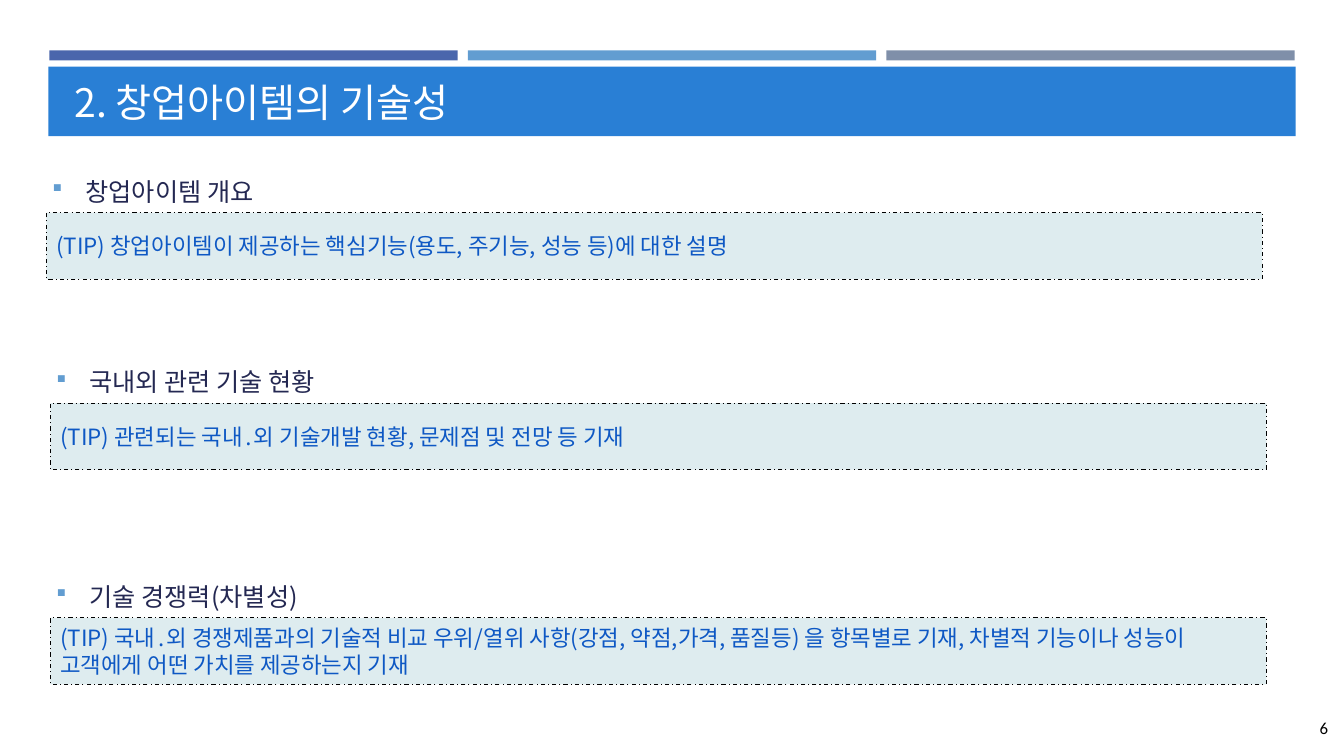
from lxml.etree import SubElement as Sub
from pptx import Presentation
from pptx.dml.color import RGBColor
from pptx.enum.dml import MSO_LINE as Dash
from pptx.enum.shapes import MSO_SHAPE as Kind
from pptx.enum.text import MSO_ANCHOR as Anchor, PP_ALIGN as Align
from pptx.oxml.ns import qn
from pptx.util import Inches, Pt

INDIGO = RGBColor(0x4A, 0x66, 0xAC)
SKY = RGBColor(0x62, 0x9D, 0xD1)
SLATE = RGBColor(0x7F, 0x8F, 0xA9)
BLUE = RGBColor(0x29, 0x7F, 0xD5)
NAVY = RGBColor(0x24, 0x28, 0x52)
PALE = RGBColor(0xDE, 0xEC, 0xEF)
INK = RGBColor(0x0E, 0x58, 0xC4)
BLACK = RGBColor(0, 0, 0)
WHITE = RGBColor(255, 255, 255)


class Page:
    font = "Noto Sans CJK KR"
    wide = 12.06

    def __init__(self, deck):
        self.slide = deck.slides.add_slide(deck.slide_layouts[6])

    def bar(self, x, y, w, h, color):
        box = self.slide.shapes.add_shape(
            Kind.RECTANGLE, Inches(x), Inches(y), Inches(w), Inches(h))
        box.shadow.inherit = False
        box.fill.solid()
        box.fill.fore_color.rgb = color
        box.line.fill.background()
        return box

    def label(self, box, text, size, color, font=font, align=Align.LEFT):
        frame = box.text_frame
        frame.word_wrap = True
        frame.vertical_anchor = Anchor.MIDDLE
        para = frame.paragraphs[0]
        para.alignment = align
        run = para.add_run()
        run.text = text
        run.font.size = Pt(size)
        run.font.name = font
        run.font.color.rgb = color
        Sub(run.font._element, qn("a:ea")).set("typeface", font)
        return para

    def text(self, x, y, w, h, *style):
        box = self.slide.shapes.add_textbox(
            Inches(x), Inches(y), Inches(w), Inches(h))
        return self.label(box, *style)

    def space(self, para, size):
        para.space_before = Pt(size * 0.2)
        para.space_after = Pt(6)

    def head(self, x, y, text):
        para = self.text(x, y, self.wide, 0.51, text, 18, NAVY)
        self.space(para, 18)
        props = para._p.get_or_add_pPr()
        props.set("marL", str(Inches(0.33)))
        props.set("indent", str(Inches(-0.33)))
        tint = Sub(props, qn("a:buClr"))
        Sub(tint, qn("a:srgbClr")).set("val", str(SKY))
        Sub(props, qn("a:buSzPct")).set("val", "92000")
        Sub(props, qn("a:buFont")).set("typeface", "Wingdings 2")
        Sub(props, qn("a:buChar")).set("char", "■")

    def tip(self, x, y, text):
        box = self.bar(x, y, self.wide, 0.66, PALE)
        box.line.color.rgb = BLACK
        box.line.width = Pt(0.75)
        box.line.dash_style = Dash.DASH_DOT
        self.space(self.label(box, text, 16, INK), 16)


def main():
    deck = Presentation()
    deck.slide_width = Inches(13.33)
    deck.slide_height = Inches(7.5)
    page = Page(deck)
    for i, color in enumerate((INDIGO, SKY, SLATE)):
        page.bar(0.49 + i * 4.15, 0.5, 4.05, 0.1, color)
    page.bar(0.48, 0.66, 12.37, 0.69, BLUE)
    page.text(12.12, 7.02, 1.15, 0.4, "6", 12, BLACK, "Calibri", Align.RIGHT)
    page.text(0.64, 0.71, page.wide, 0.6, "2. 창업아이템의 기술성", 28, WHITE)
    parts = (
        (0.42, 1.64, "창업아이템 개요",
         "(TIP) 창업아이템이 제공하는 핵심기능(용도, 주기능, 성능 등)에 대한 설명"),
        (0.46, 3.53, "국내외 관련 기술 현황",
         "(TIP) 관련되는 국내․외 기술개발 현황, 문제점 및 전망 등 기재"),
        (0.46, 5.66, "기술 경쟁력(차별성)",
         "(TIP) 국내․외 경쟁제품과의 기술적 비교 우위/열위 사항"
         "(강점, 약점,가격, 품질등) 을 항목별로 기재, "
         "차별적 기능이나 성능이 고객에게 어떤 가치를 제공하는지 기재"),
    )
    for x, y, head, tip in parts:
        page.head(x, y, head)
        page.tip(x + 0.04, y + 0.47, tip)
    deck.save("out.pptx")


if __name__ == "__main__":
    main()
